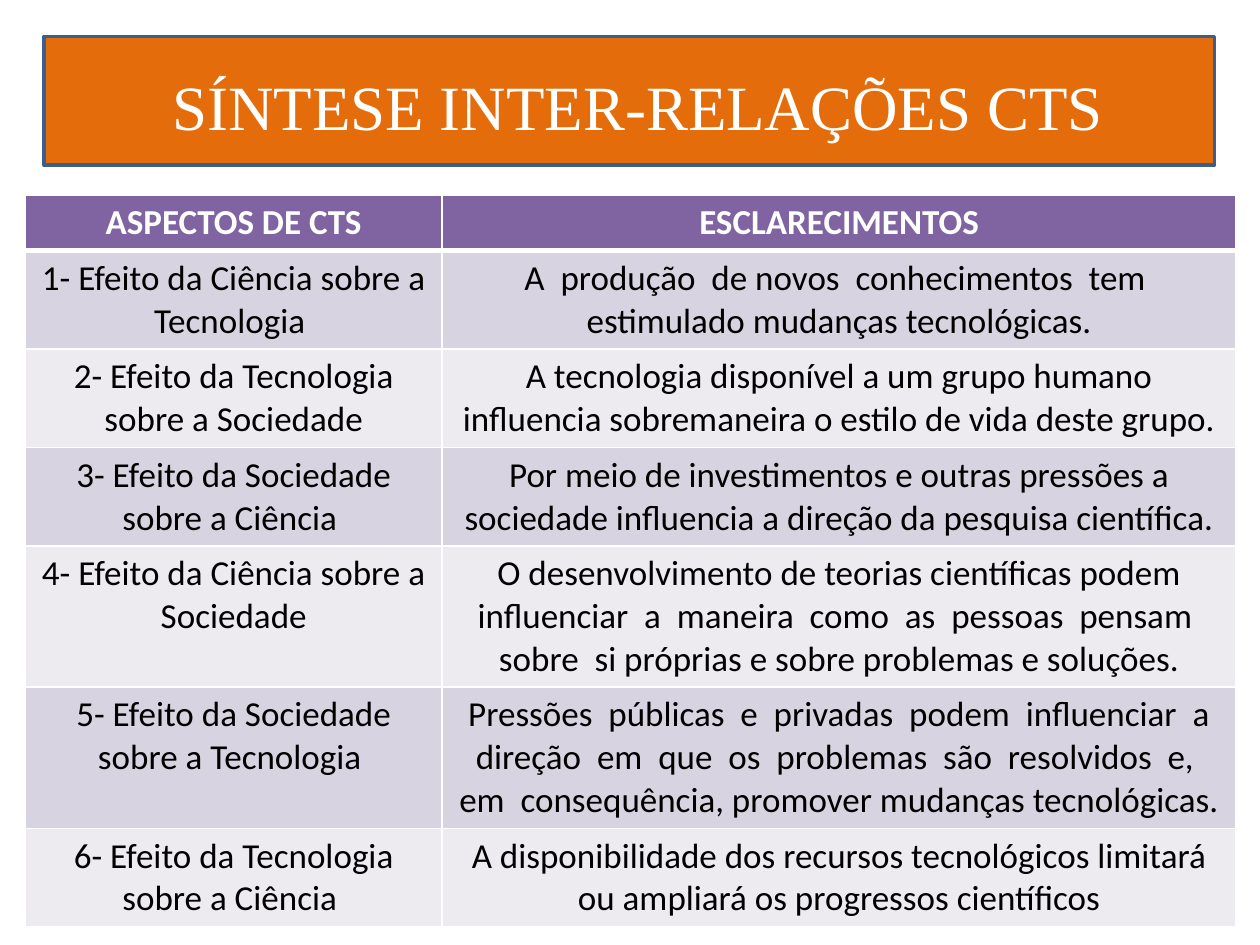
from lxml.etree import SubElement
from pptx import Presentation
from pptx.dml.color import RGBColor
from pptx.enum.shapes import MSO_SHAPE
from pptx.enum.text import MSO_ANCHOR, PP_ALIGN
from pptx.oxml.ns import qn
from pptx.util import Inches, Pt

TITLE = " SÍNTESE INTER-RELAÇÕES CTS"
HEADER = ("ASPECTOS DE CTS", "ESCLARECIMENTOS")
ASPECTS = [
    ("1- Efeito da Ciência sobre a Tecnologia ",
     "A  produção  de novos  conhecimentos  tem  estimulado mudanças tecnológicas."),
    ("2- Efeito da Tecnologia sobre a Sociedade",
     "A tecnologia disponível a um grupo humano influencia sobremaneira o estilo de vida "
     "deste grupo."),
    ("3- Efeito da Sociedade sobre a Ciência ",
     "Por meio de investimentos e outras pressões a sociedade influencia a direção da "
     "pesquisa científica."),
    ("4- Efeito da Ciência sobre a Sociedade",
     "O desenvolvimento de teorias científicas podem influenciar  a  maneira  como  as  "
     "pessoas  pensam  sobre  si próprias e sobre problemas e soluções."),
    ("5- Efeito da Sociedade sobre a Tecnologia ",
     "Pressões  públicas  e  privadas  podem  influenciar  a direção  em  que  os  problemas  "
     "são  resolvidos  e,  em  consequência, promover mudanças tecnológicas."),
    ("6- Efeito da Tecnologia sobre a Ciência ",
     "A disponibilidade dos recursos tecnológicos limitará ou ampliará os progressos "
     "científicos"),
]
COLUMN_WIDTHS = (3.31, 6.3)
ROW_HEIGHTS = (0.43, 0.78, 0.78, 0.78, 1.12, 1.12, 0.78)
ORANGE, BLUE, WHITE, BLACK = "E46C0A", "3A5F8C", "FFFFFF", "000000"
PURPLE, BANDS = "8064A2", ("D8D3E0", "EDEAF0")


def color(hex_value):
    return RGBColor.from_string(hex_value)


def place(shape, left, top, width, height):
    shape.left, shape.top = Inches(left), Inches(top)
    shape.width, shape.height = Inches(width), Inches(height)


def paint(shape_or_cell, hex_value):
    shape_or_cell.fill.solid()
    shape_or_cell.fill.fore_color.rgb = color(hex_value)


def write(text_frame, text, font_name, size, hex_value, bold=False):
    paragraph = text_frame.paragraphs[0]
    paragraph.alignment = PP_ALIGN.CENTER
    run = paragraph.add_run()
    run.text = text
    run.font.name, run.font.size, run.font.bold = font_name, Pt(size), bold
    run.font.color.rgb = color(hex_value)


def add_borders(cell, widths):
    """Draw white cell borders; widths maps a side (L, R, T, B) to points."""
    properties = cell._tc.get_or_add_tcPr()
    for side, width in widths.items():
        line = SubElement(properties, qn(f"a:ln{side}"), w=str(Pt(width)))
        fill = SubElement(line, qn("a:solidFill"))
        SubElement(fill, qn("a:srgbClr"), val=WHITE)


def add_title(slide):
    banner = slide.shapes.add_shape(
        MSO_SHAPE.RECTANGLE, Inches(0.35), Inches(0.29), Inches(9.29), Inches(1.02))
    banner.shadow.inherit = False
    paint(banner, ORANGE)
    banner.line.color.rgb = color(BLUE)
    banner.line.width = Pt(2)

    title = slide.shapes.title
    place(title, 0, 0.21, 10, 1.25)
    title.text_frame.vertical_anchor = MSO_ANCHOR.MIDDLE
    write(title.text_frame, TITLE, "Times New Roman", 36, WHITE)
    banner.element.addnext(title.element)  # title in front of the banner


def add_aspects_table(slide):
    rows = [HEADER, *ASPECTS]
    table = slide.shapes.add_table(
        len(rows), len(HEADER), Inches(0.2), Inches(1.55),
        Inches(sum(COLUMN_WIDTHS)), Inches(sum(ROW_HEIGHTS))).table
    for column, width in zip(table.columns, COLUMN_WIDTHS):
        column.width = Inches(width)
    for index, (row, height, texts) in enumerate(zip(table.rows, ROW_HEIGHTS, rows)):
        row.height = Inches(height)
        is_header = index == 0
        for cell, text in zip(row.cells, texts):
            add_borders(cell, {"L": 1, "R": 1, "T": 3 if index == 1 else 1,
                               "B": 3 if is_header else 1})
            paint(cell, PURPLE if is_header else BANDS[(index - 1) % 2])
            write(cell.text_frame, text, "Calibri", 20,
                  WHITE if is_header else BLACK, is_header)


def main():
    presentation = Presentation()
    presentation.slide_width, presentation.slide_height = Inches(10), Inches(7.5)
    slide = presentation.slides.add_slide(presentation.slide_layouts[5])
    add_title(slide)
    add_aspects_table(slide)
    presentation.save("out.pptx")


if __name__ == "__main__":
    main()
